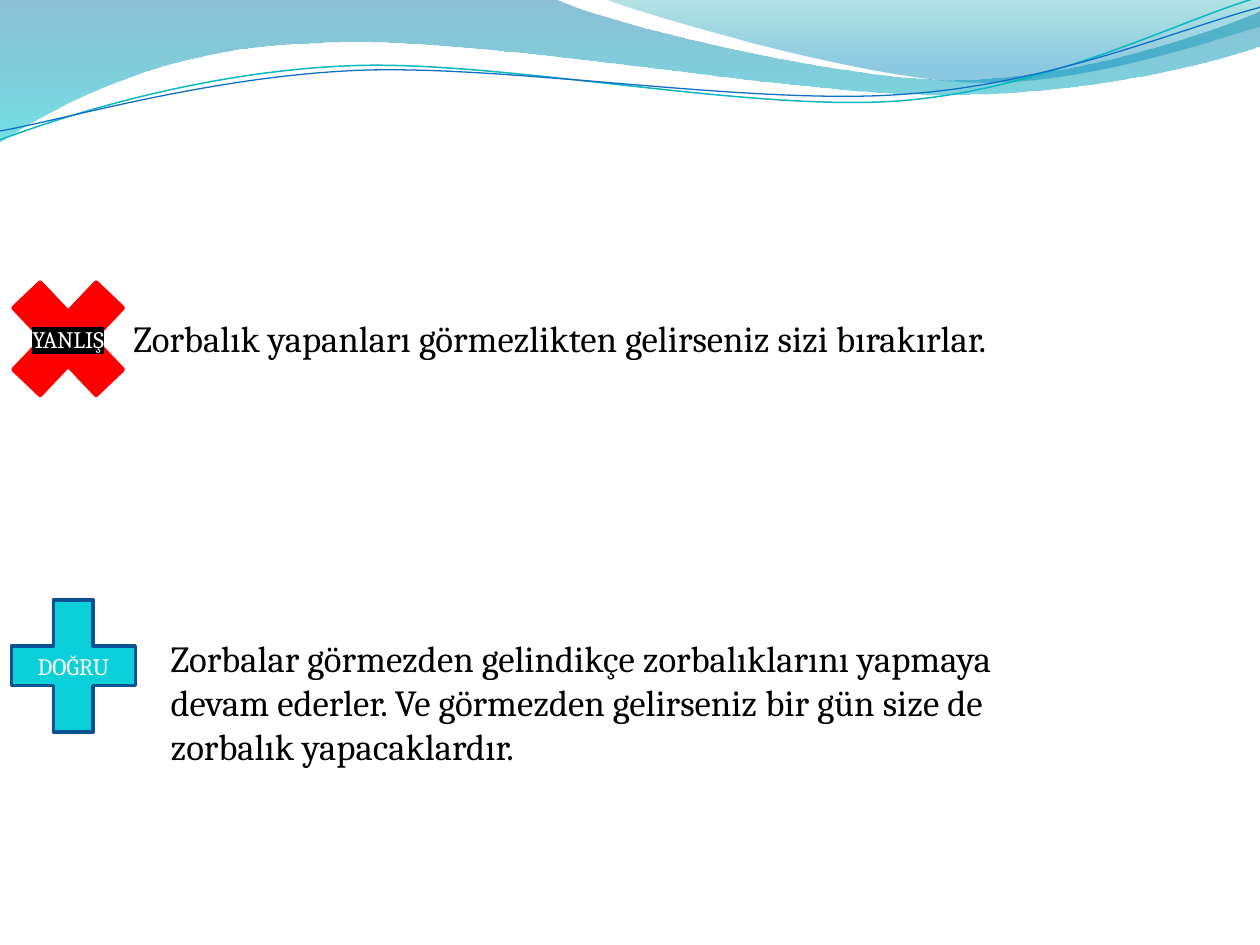
from lxml.etree import SubElement
from pptx import Presentation
from pptx.dml.color import RGBColor
from pptx.enum.shapes import MSO_SHAPE as Preset
from pptx.enum.text import MSO_ANCHOR as Anchor, MSO_AUTO_SIZE as AutoSize, PP_ALIGN as Align
from pptx.oxml.ns import qn
from pptx.util import Cm, Pt

COLORS = {
    "deep_blue": "0074A1", "aqua": "00C6CF", "sea": "00A1A9", "sky": "008BBF",
    "teal": "0AB8BF", "blue": "0F6FC6", "red": "FF0000", "cyan": "0BD0D9",
    "navy": "0B5292", "black": "000000", "white": "FFFFFF",
}
FONT = "Cambria"
WAVE_TILT = 357.3

# Outlines in cm: a pair is a straight step, six numbers are a Bézier step.
BAND = [(0, 0), (11.18, -0.03), (12.09, 0.43, 16.87, 1.6, 19.25, 1.6),
        (21.67, 1.6, 24.33, 0.66, 25.4, 0.23), (25.43, 0.91),
        (24.97, 1.12, 22.1, 1.93, 18.95, 1.91), (15.8, 1.91, 9.7, 0.71, 6.53, 0.86),
        (3.28, 0.91, 1.17, 2.11, -0.03, 2.87)]
WING = [(12.17, -0.03), (12.93, 0.28, 17.32, 1.57, 19.53, 1.65),
        (21.74, 1.75, 24.41, 0.81, 25.4, 0.53), (25.4, 0)]
# The waves are drawn level and then tilted.
TEAL_WAVE = [(-0.05, 2.22), (1.19, 1.82, 4.02, 1.04, 7.05, 1.06),
             (10.05, 1.07, 15.02, 2.37, 18.08, 2.29), (21.13, 2.2, 23.86, 0.91, 25.41, 0.55)]
BLUE_WAVE = [(-0.04, 2.04), (1.16, 1.9, 4.17, 1.15, 7.2, 1.16),
             (10.25, 1.18, 15.13, 2.25, 18.19, 2.16), (21.22, 2.1, 23.93, 1.06, 25.45, 0.75)]


def rgb(name):
    return RGBColor.from_string(COLORS[name])


def add_outline(page, steps, close):
    """Build the outline from its nodes, then bend the Bézier steps."""
    nodes = [(Cm(step[-2]), Cm(step[-1])) for step in steps]
    builder = page.shapes.build_freeform(*nodes[0])
    builder.add_line_segments(nodes[1:], close=close)
    shape = builder.convert_to_shape()
    shape.shadow.inherit = False
    lines = list(shape.element.spPr.iter(qn("a:lnTo")))
    for line, step in zip(lines, steps[1:]):
        if len(step) == 6:
            bend(line, step, shape.left, shape.top)
    return shape


def bend(line, step, left, top):
    line.tag = qn("a:cubicBezTo")
    for point in list(line):
        line.remove(point)
    for x, y in zip(step[::2], step[1::2]):
        SubElement(line, qn("a:pt"), x=str(Cm(x) - left), y=str(Cm(y) - top))


def add_gradient_area(page, steps, stops):
    """Fill an outline downwards; each stop is position, colour, opacity in percent."""
    shape = add_outline(page, steps, close=True)
    shape.line.fill.background()
    shape.fill.gradient()
    shape.fill.gradient_angle = 270
    for stop, (position, color, _) in zip(shape.fill.gradient_stops, stops):
        stop.position = position
        stop.color.rgb = rgb(color)
    tags = shape.element.spPr.iter(qn("a:srgbClr"))
    for tag, (_, _, opacity) in zip(tags, stops):
        SubElement(tag, qn("a:alpha"), val=str(opacity * 1000))


def add_wave(page, steps, color, width):
    shape = add_outline(page, steps, close=False)
    shape.rotation = WAVE_TILT
    shape.fill.background()
    shape.line.color.rgb = rgb(color)
    shape.line.width = Pt(width)


def write(frame, text, size, color, align):
    frame.word_wrap = True
    para = frame.paragraphs[0]
    para.alignment = align
    span = para.add_run()
    span.text = text
    for name, value in {"name": FONT, "size": Pt(size)}.items():
        setattr(span.font, name, value)
    span.font.color.rgb = rgb(color)
    return span


def add_statement(page, place, text):
    box = page.shapes.add_textbox(*map(Cm, place))
    write(box.text_frame, text, 21, "black", Align.LEFT)
    box.text_frame.auto_size = AutoSize.SHAPE_TO_FIT_TEXT


def add_mark(page, preset, place, text, fill, line):
    mark = page.shapes.add_shape(preset, *map(Cm, place))
    mark.shadow.inherit = False
    mark.fill.solid()
    mark.fill.fore_color.rgb = rgb(fill)
    mark.line.color.rgb = rgb(line)
    mark.line.width = Pt(2)
    mark.text_frame.vertical_anchor = Anchor.MIDDLE
    return write(mark.text_frame, text, 13.5, "white", Align.CENTER)


def highlight(span, color):
    properties = span.font._element
    marker = SubElement(properties, qn("a:highlight"))
    SubElement(marker, qn("a:srgbClr"), val=COLORS[color])
    properties.find(qn("a:solidFill")).addnext(marker)


def main():
    deck = Presentation()
    deck.slide_width, deck.slide_height = Cm(25.4), Cm(19.05)
    page = deck.slides.add_slide(deck.slide_layouts[6])

    add_gradient_area(page, BAND, [(0, "deep_blue", 45), (1, "aqua", 55)])
    add_gradient_area(page, WING, [(0, "sea", 30), (0.8, "sky", 45)])
    add_wave(page, TEAL_WAVE, "teal", 0.85)
    add_wave(page, BLUE_WAVE, "blue", 0.75)

    add_statement(page, (2.44, 6.23, 19.25, 1.14),
                  "Zorbalık yapanları görmezlikten gelirseniz sizi bırakırlar.")
    wrong = add_mark(page, Preset.MATH_MULTIPLY, (-0.24, 5.13, 3.23, 3.4),
                     "YANLIŞ", "red", "red")
    highlight(wrong, "black")
    add_mark(page, Preset.MATH_PLUS, (-0.22, 11.61, 3.4, 3.63), "DOĞRU", "cyan", "navy")
    add_statement(page, (3.19, 12.69, 18.24, 2.95),
                  "Zorbalar görmezden gelindikçe zorbalıklarını yapmaya devam ederler. "
                  "Ve görmezden gelirseniz bir gün size de zorbalık yapacaklardır.")
    deck.save("out.pptx")


if __name__ == "__main__":
    main()
